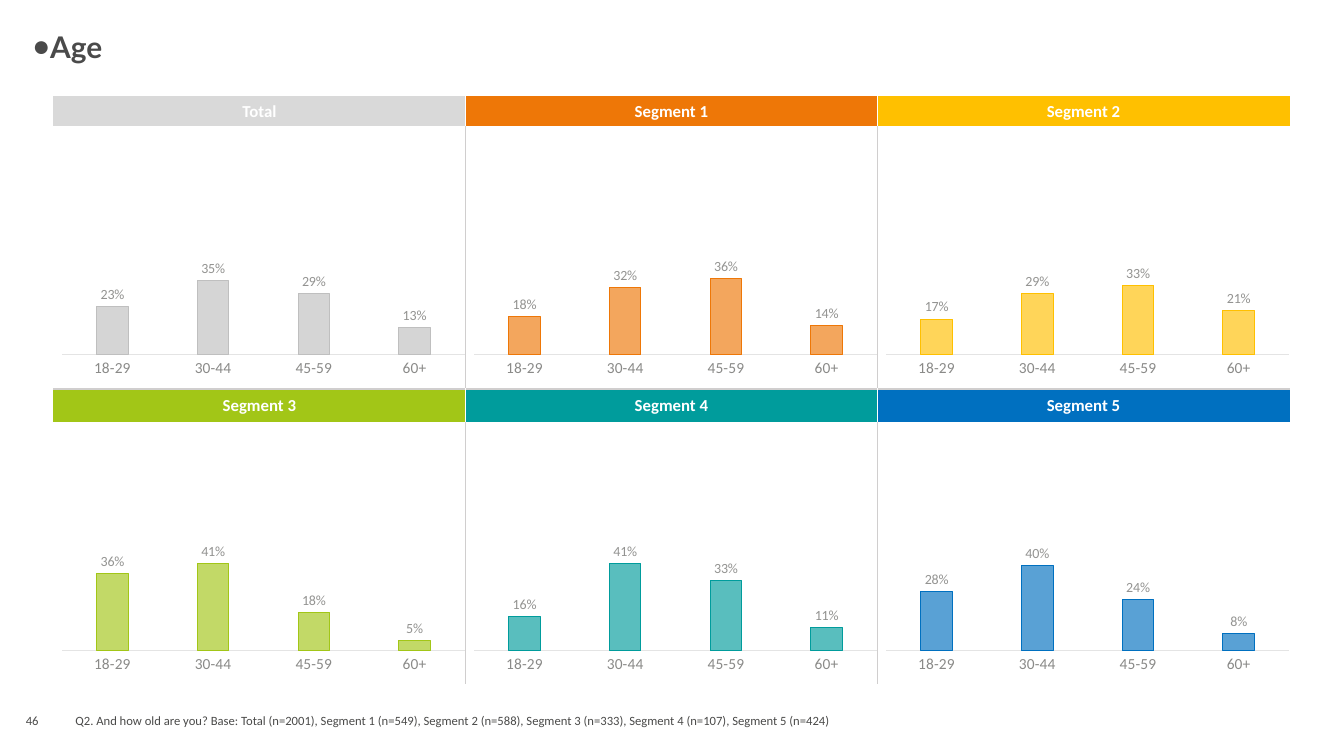
import pptx
import pptx.chart.data
import pptx.dml.color
import pptx.enum.chart
import pptx.enum.text
import pptx.oxml
import pptx.oxml.ns
import pptx.util

COLORS = {
    "white": "FFFFFF", "title": "4A4A4A", "text": "4A4A49", "rule": "D0CECE",
    "axis": "E4E4E4", "category": "8A8A88", "label": "939391",
}
AGES = ["18-29", "30-44", "45-59", "60+"]
PANELS = [
    ("Total", "D9D9D9", "BFBFBF", (23, 35, 29, 13)),
    ("Segment 1", "EE7707", "EE7707", (18, 32, 36, 14)),
    ("Segment 2", "FFC000", "FFC000", (17, 29, 33, 21)),
    ("Segment 3", "A2C617", "A2C617", (36, 41, 18, 5)),
    ("Segment 4", "009C9C", "009C9C", (16, 41, 33, 11)),
    ("Segment 5", "0070C0", "0070C0", (28, 40, 24, 8)),
]
BASE_NOTE = (
    "Q2. And how old are you? Base: Total (n=2001), Segment 1 (n=549), "
    "Segment 2 (n=588), Segment 3 (n=333), Segment 4 (n=107), Segment 5 (n=424)"
)
COLUMNS = 3
COLUMN_WIDTH = 40.87
ROW_HEIGHTS = [3.1, 26, 3.3, 26]
TABLE_LEFT, TABLE_TOP = 5.3, 9.5
CHART_ROWS = [(12.3, 26.2), (41.4, 26.5)]
PLOT_SHARES = {"x": 0.021, "y": 0.075, "w": 0.979, "h": 0.8}
NO_STYLE = "{2D5ABB26-0587-4C30-8999-92F81FD0307C}"
MIDDLE = pptx.enum.text.MSO_ANCHOR.MIDDLE
CENTER = pptx.enum.text.PP_ALIGN.CENTER
LEFT = pptx.enum.text.PP_ALIGN.LEFT


def grid(*counts):
    return [pptx.util.Inches(count / 10) for count in counts]


def rgb(value):
    return pptx.dml.color.RGBColor.from_string(value)


def apply(target, values):
    for name, value in values.items():
        setattr(target, name, value)


def format_font(font, size, color, name="Calibri", bold=False):
    apply(font, {"size": pptx.util.Pt(size), "name": name, "bold": bold})
    font.color.rgb = rgb(COLORS[color])


def format_line(line, color):
    line.color.rgb = rgb(color)
    line.width = pptx.util.Pt(0.75)


def xml(markup):
    namespaces = pptx.oxml.ns.nsdecls("a", "c")
    tag, rest = markup[1:].split(" ", 1)
    return pptx.oxml.parse_xml(f"<{tag} {namespaces} {rest}")


def add_title(page, text):
    title = page.shapes.title
    left, top, width, height = grid(2.2, 3, 104, 9.4)
    apply(title, {"left": left, "top": top, "width": width, "height": height})
    apply(title.text_frame, {
        "text": text,
        "vertical_anchor": pptx.enum.text.MSO_ANCHOR.TOP,
        "auto_size": pptx.enum.text.MSO_AUTO_SIZE.NONE,
    })
    para = title.text_frame.paragraphs[0]
    apply(para, {"alignment": LEFT, "line_spacing": 0.8})
    properties = para._p.get_or_add_pPr()
    properties.set("marL", "0")
    properties.set("indent", str(-pptx.util.Inches(0.29)))
    properties.append(xml('<a:buFont typeface="Arial"/>'))
    properties.append(xml('<a:buChar char="●"/>'))
    format_font(para.runs[0].font, 21.3, "title", "Lato", True)


def add_note(page, text, left, width, alignment):
    box = page.shapes.add_textbox(*grid(left, 69.5, width, 4))
    apply(box.text_frame, {"word_wrap": True, "vertical_anchor": MIDDLE, "text": text})
    para = box.text_frame.paragraphs[0]
    para.alignment = alignment
    format_font(para.runs[0].font, 9, "text")


def set_borders(cell, sides):
    properties = cell._tc.get_or_add_tcPr()
    for index, (side, color) in enumerate(sides.items()):
        properties.insert(index, xml(
            f'<a:ln{side} w="12700"><a:solidFill><a:srgbClr val="{COLORS[color]}"/>'
            f"</a:solidFill></a:ln{side}>"
        ))


def border_sides(row, column):
    inner = "rule" if row % 2 else "white"
    sides = {}
    if column > 0:
        sides["L"] = inner
    if column < COLUMNS - 1:
        sides["R"] = inner
    if row > 0:
        sides["T"] = "white" if row % 2 else "rule"
    if row < len(ROW_HEIGHTS) - 1:
        sides["B"] = inner
    return sides


def format_header(cell, text, fill):
    apply(cell, {"text": text, "vertical_anchor": MIDDLE})
    cell.fill.solid()
    cell.fill.fore_color.rgb = rgb(fill)
    para = cell.text_frame.paragraphs[0]
    para.alignment = CENTER
    format_font(para.runs[0].font, 12, "white", bold=True)


def add_panel_table(page):
    frame = page.shapes.add_table(
        len(ROW_HEIGHTS), COLUMNS,
        *grid(TABLE_LEFT, TABLE_TOP, COLUMNS * COLUMN_WIDTH, sum(ROW_HEIGHTS)),
    )
    table = frame.table
    apply(table, {"first_row": False, "horz_banding": False})
    frame._element.xpath(".//a:tableStyleId")[0].text = NO_STYLE
    for column, width in zip(table.columns, grid(*[COLUMN_WIDTH] * COLUMNS)):
        column.width = width
    for row, height in zip(table.rows, grid(*ROW_HEIGHTS)):
        row.height = height
    for row in range(len(ROW_HEIGHTS)):
        for column in range(COLUMNS):
            cell = table.cell(row, column)
            if row % 2:
                cell.fill.background()
            else:
                name, fill, _, _ = PANELS[row // 2 * COLUMNS + column]
                format_header(cell, name, fill)
            set_borders(cell, border_sides(row, column))


def set_plot_layout(chart):
    area = chart._chartSpace.xpath(".//c:plotArea")[0]
    for layout in area.xpath("./c:layout"):
        area.remove(layout)
    modes = '<c:xMode val="edge"/><c:yMode val="edge"/>'
    shares = "".join(f'<c:{key} val="{value}"/>' for key, value in PLOT_SHARES.items())
    area.insert(0, xml(
        '<c:layout ><c:manualLayout><c:layoutTarget val="inner"/>'
        f"{modes}{shares}</c:manualLayout></c:layout>"
    ))


def format_axes(chart):
    ages, percent = chart.category_axis, chart.value_axis
    no_tick = pptx.enum.chart.XL_TICK_MARK.NONE
    apply(ages, {"major_tick_mark": no_tick, "minor_tick_mark": no_tick})
    format_font(ages.tick_labels.font, 11, "category")
    format_line(ages.format.line, COLORS["axis"])
    apply(percent, {
        "minimum_scale": 0, "maximum_scale": 100,
        "has_major_gridlines": False, "visible": False,
    })


def add_age_chart(page, box, color, values):
    chart_data = pptx.chart.data.CategoryChartData()
    chart_data.categories = AGES
    chart_data.add_series("Series 1", values)
    kind = pptx.enum.chart.XL_CHART_TYPE.COLUMN_CLUSTERED
    chart = page.shapes.add_chart(kind, *box, chart_data).chart
    apply(chart, {"has_legend": False, "has_title": False})
    format_font(chart.font, 10, "text", "Lato")
    format_axes(chart)
    set_plot_layout(chart)
    plot = chart.plots[0]
    apply(plot, {"gap_width": 219, "vary_by_categories": False, "has_data_labels": True})
    apply(plot.data_labels, {
        "show_value": True, "number_format": '0"%"', "number_format_is_linked": False,
        "position": pptx.enum.chart.XL_LABEL_POSITION.OUTSIDE_END,
    })
    format_font(plot.data_labels.font, 10, "label")
    bars = plot.series[0].format
    bars.fill.solid()
    bars.fill.fore_color.rgb = rgb(color)
    fill_color = plot.series[0]._element.xpath("./c:spPr/a:solidFill/a:srgbClr")[0]
    fill_color.append(xml('<a:alpha val="65000"/>'))
    format_line(bars.line, color)


def main():
    deck = pptx.Presentation()
    deck.slide_width = pptx.util.Inches(13.33)
    deck.slide_height = pptx.util.Inches(7.5)
    page = deck.slides.add_slide(deck.slide_layouts.get_by_name("Title Only"))
    add_panel_table(page)
    add_title(page, "Age")
    add_note(page, "46", 1, 4.4, CENTER)
    add_note(page, BASE_NOTE, 6.5, 120.5, LEFT)
    for index, (_, _, color, values) in enumerate(PANELS):
        row, column = divmod(index, COLUMNS)
        top, height = CHART_ROWS[row]
        left = TABLE_LEFT + column * COLUMN_WIDTH
        add_age_chart(page, grid(left, top, COLUMN_WIDTH, height), color, values)
    deck.save("out.pptx")


if __name__ == "__main__":
    main()
